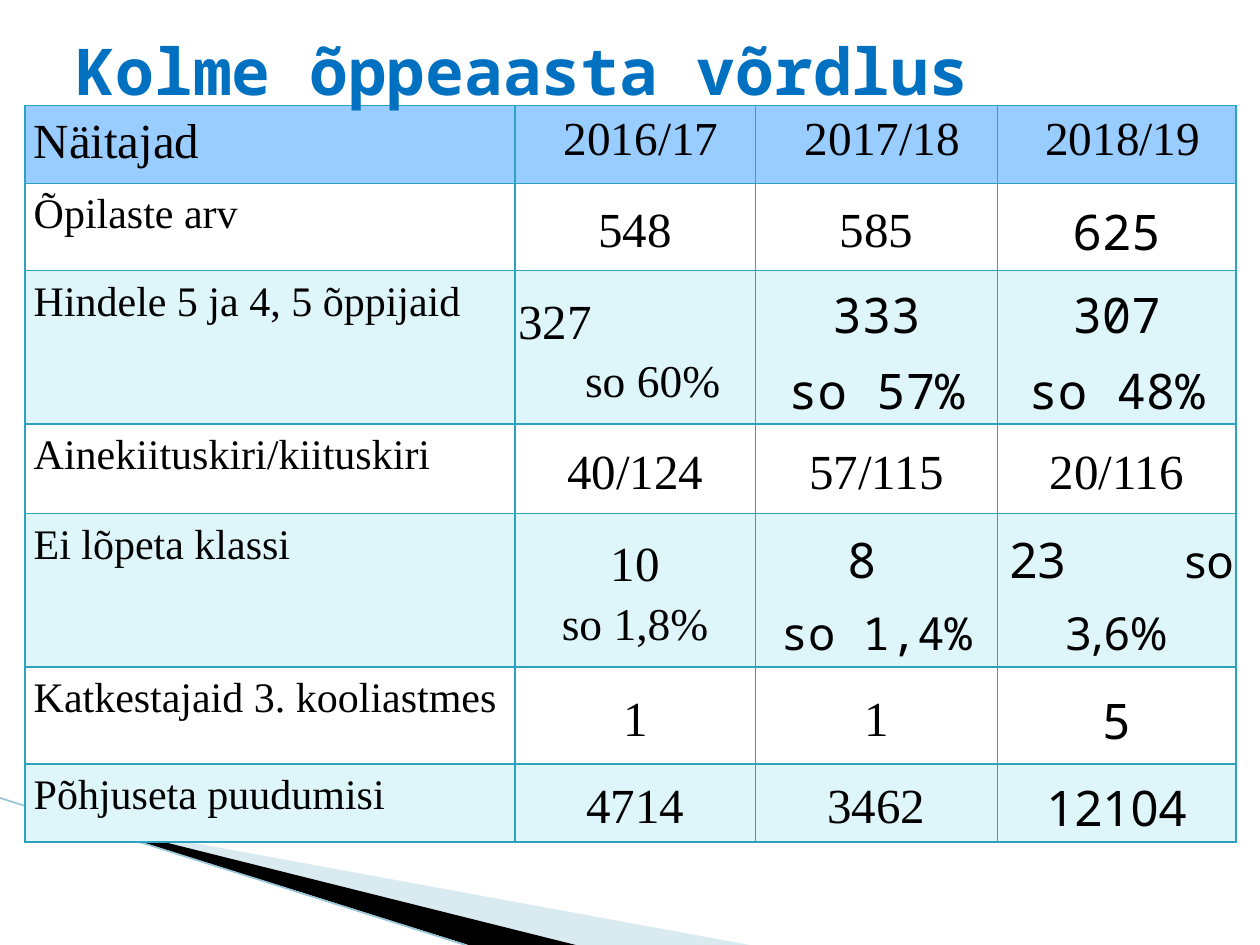
"""Build a slide with a table comparing three school years."""
import lxml.etree
import pptx
import pptx.dml.color
import pptx.enum.shapes
import pptx.enum.text
import pptx.oxml.ns
import pptx.util

Pt = pptx.util.Pt
PP_ALIGN = pptx.enum.text.PP_ALIGN
ANCHOR = pptx.enum.text.MSO_ANCHOR
qn = pptx.oxml.ns.qn
SERIF, SANS, MONO = "Times New Roman", "Noto Sans", "Noto Sans Mono"


def rgb(value):
    """Turn a hex string into a colour."""
    return pptx.dml.color.RGBColor.from_string(value)


def apply(obj, formats):
    """Set each attribute named in formats."""
    for name, value in formats.items():
        setattr(obj, name, value)


prs = pptx.Presentation()
apply(prs, {"slide_width": Pt(720), "slide_height": Pt(540)})
s = prs.slides.add_slide(prs.slide_layouts[5])

wedges = [
    ("A0CBDC", 40, [(39.6, 468.7), (428.4, 540), (328.3, 540), (39.6, 468)]),
    ("000000", 100, [(38.2, 467.3), (329, 540), (267.8, 540), (38.9, 468)]),
]
for color, opacity, points in wedges:
    points = [(Pt(x), Pt(y)) for x, y in points]
    fb = s.shapes.build_freeform(*points[0], scale=1.0)
    fb.add_line_segments(points[1:], close=True)
    sp = fb.convert_to_shape()
    sp.shadow.inherit = False
    sp.fill.solid()
    sp.fill.fore_color.rgb = rgb(color)
    sp.line.fill.background()
    if opacity < 100:
        clr = sp.element.spPr.find(".//" + qn("a:srgbClr"))
        lxml.etree.SubElement(clr, qn("a:alpha"), val=str(opacity * 1000))

cx = s.shapes.add_connector(pptx.enum.shapes.MSO_CONNECTOR.STRAIGHT,
                            Pt(0), Pt(456), Pt(266), Pt(540))
cx.line.color.rgb = rgb("97C5D8")
cx.line.width = Pt(0.95)
lxml.etree.SubElement(cx.element.spPr, qn("a:effectLst"))

widths = [280, 137.5, 138.25, 136.25]
rows = [
    (44.5, [(SERIF, 28, "Näitajad"), (SERIF, 27, " 2016/17"),
            (SERIF, 27, " 2017/18"), (SERIF, 27, " 2018/19")]),
    (50, [(SERIF, 24, "Õpilaste arv"), (SERIF, 28, "548"),
          (SERIF, 28, "585"), (MONO, 28, "625")]),
    (87.75, [(SERIF, 24, "Hindele 5 ja 4, 5 õppijaid"), (SERIF, 26, "327", "so 60%"),
             (MONO, 28, "333", "so 57%"), (MONO, 28, "307", "so 48%")]),
    (51, [(SERIF, 24, "Ainekiituskiri/kiituskiri"), (SERIF, 28, "40/124"),
          (SERIF, 28, "57/115"), (SERIF, 28, "20/116")]),
    (87.75, [(SERIF, 24, "Ei lõpeta klassi"), (SERIF, 26, "10", "so 1,8%"),
             (MONO, 26, "8 ", "so 1,4%"), (SANS, 26, "23|\tso", "3,6%")]),
    (55.5, [(SERIF, 24, "Katkestajaid 3. kooliastmes"), (SERIF, 28, "1"),
            (SERIF, 28, "1"), (MONO, 28, "5")]),
    (44.5, [(SERIF, 24, "Põhjuseta puudumisi"), (SERIF, 28, "4714"),
            (SERIF, 28, "3462"), (SANS, 28, "12104")]),
]
tbl = s.shapes.add_table(len(rows), len(widths), Pt(14.25), Pt(60.25), Pt(sum(widths)),
                         Pt(sum(height for height, _ in rows))).table
apply(tbl, {"first_row": False, "horz_banding": False})
for col, width in zip(tbl.columns, widths):
    col.width = Pt(width)

for i, (height, cells) in enumerate(rows):
    tbl.rows[i].height = Pt(height)
    for j, (font, size, *lines) in enumerate(cells):
        c = tbl.cell(i, j)
        side = Pt(0 if j else 5)
        apply(c, {"margin_left": side, "margin_right": side,
                  "margin_top": Pt(0 if j else 0.7), "margin_bottom": Pt(0),
                  "vertical_anchor": ANCHOR.MIDDLE if i and j else ANCHOR.TOP})
        tcPr = c._tc.get_or_add_tcPr()
        for tag in ("a:lnL", "a:lnR", "a:lnT", "a:lnB"):
            ln = lxml.etree.SubElement(tcPr, qn(tag), w=str(Pt(1)))
            fill = lxml.etree.SubElement(ln, qn("a:solidFill"))
            lxml.etree.SubElement(fill, qn("a:srgbClr"), val="2DA2BF")
        if i % 2:
            c.fill.background()
        else:
            c.fill.solid()
            c.fill.fore_color.rgb = rgb("DEF5FA" if i else "99CCFF")
        for k, line in enumerate(lines):
            p = c.text_frame.add_paragraph() if k else c.text_frame.paragraphs[0]
            apply(p, {"alignment": PP_ALIGN.CENTER if j else PP_ALIGN.LEFT,
                      "line_spacing": 1.15,
                      "space_after": Pt(10 if i < 2 or j == 0 else 0)})
            for n, text in enumerate(line.split("|")):
                r = p.add_run()
                r.text = text
                first_of_many = len(lines) > 1 and k == n == 0
                apply(r.font, {"name": font, "size": Pt(28 if first_of_many else size)})
                r.font.color.rgb = rgb("000000")

honours, share = tbl.cell(2, 1).text_frame.paragraphs
honours.alignment = PP_ALIGN.LEFT
honours._p.get_or_add_pPr().set("marL", str(Pt(2)))
share._p.get_or_add_pPr().set("marL", str(Pt(20)))
failing = tbl.cell(4, 3).text_frame.paragraphs[0]
failing.alignment = PP_ALIGN.LEFT
pPr = failing._p.get_or_add_pPr()
pPr.set("marL", str(Pt(7)))
tabs = lxml.etree.SubElement(pPr, qn("a:tabLst"))
lxml.etree.SubElement(tabs, qn("a:tab"), pos=str(Pt(100)), algn="l")

sp = s.shapes.title
apply(sp, {"left": Pt(36.75), "top": Pt(15), "width": Pt(648), "height": Pt(49.75)})
tf = sp.text_frame
apply(tf, {"word_wrap": True, "vertical_anchor": ANCHOR.MIDDLE,
           "auto_size": pptx.enum.text.MSO_AUTO_SIZE.NONE})
p = tf.paragraphs[0]
p.alignment = PP_ALIGN.LEFT
r = p.add_run()
r.text = "Kolme õppeaasta võrdlus"
apply(r.font, {"name": MONO, "size": Pt(36.9), "bold": True})
r.font.color.rgb = rgb("0070C0")
sp.element.getparent().append(sp.element)

prs.save("out.pptx")
